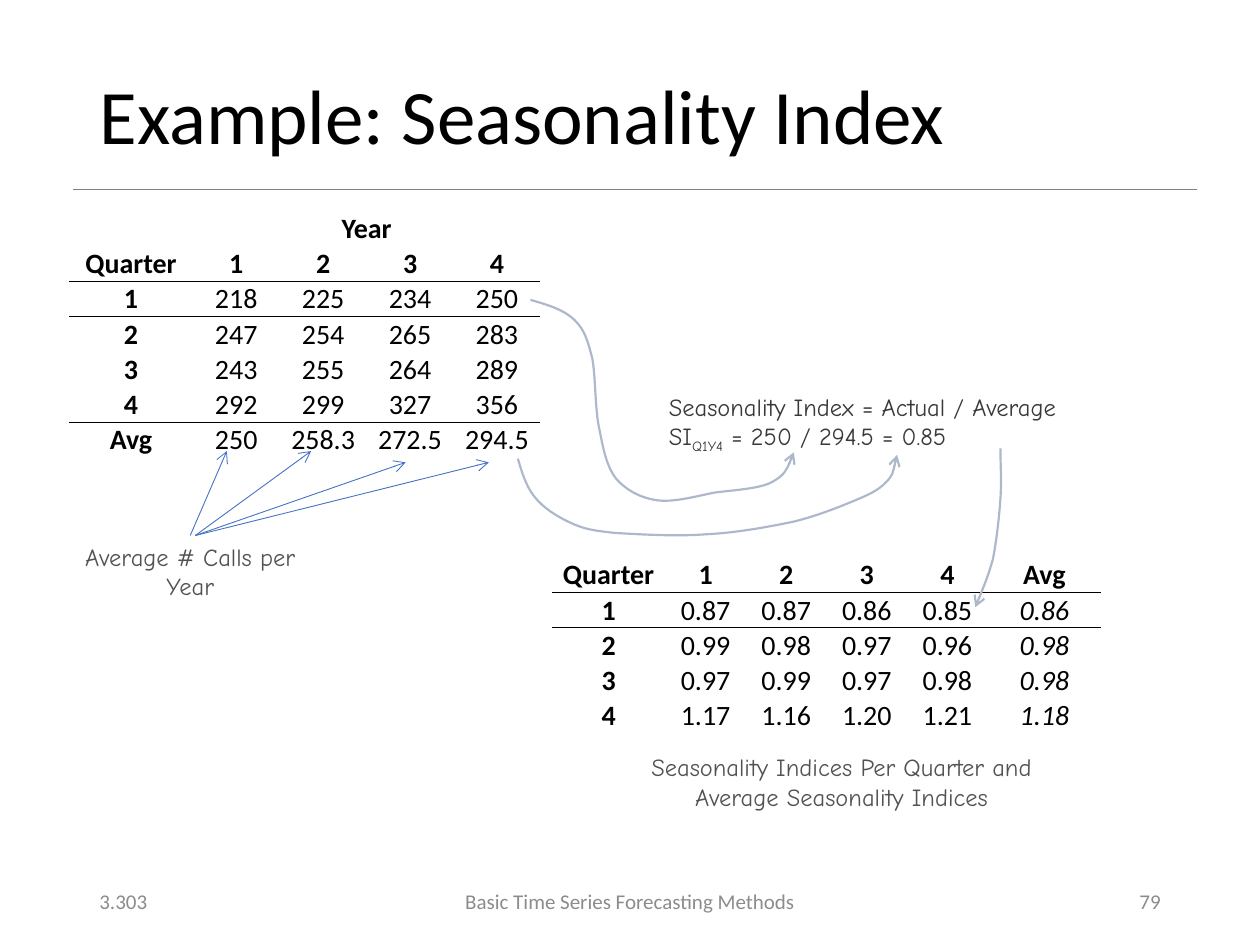
from dataclasses import dataclass

from lxml import etree
from pptx import Presentation
from pptx import util as u
from pptx.dml.color import RGBColor
from pptx.enum import shapes, text
from pptx.oxml import ns


@dataclass(frozen=True)
class Theme:
    black: str = "000000"
    grey: str = "808080"
    footer: str = "8C8C8C"
    note: str = "525252"
    formula: str = "3B3838"
    blue: str = "4472C4"
    pale: str = "ADB9CA"
    body_font: str = "Calibri"
    note_font: str = "Comic Neue"
    title_size: int = 44
    table_size: int = 16
    note_size: int = 14
    footer_size: int = 12


theme = Theme()
px = 9144
left, center, right = text.PP_ALIGN.LEFT, text.PP_ALIGN.CENTER, text.PP_ALIGN.RIGHT


def write(paragraph, words, size, font=theme.body_font, color=theme.black,
          align=left, bold=False, italic=False, baseline=0):
    paragraph.alignment = align
    if not words:
        paragraph._p.get_or_add_endParaRPr().set("sz", str(size * 100))
        return
    run = paragraph.add_run()
    run.text = words
    run.font.size = u.Pt(size)
    run.font.name = font
    run.font.bold = bold
    run.font.italic = italic
    run.font.color.rgb = RGBColor.from_string(color)
    if baseline:
        run.font._element.set("baseline", str(baseline * 1000))


def draw_line(shape, color, width, arrow=True):
    shape.line.color.rgb = RGBColor.from_string(color)
    shape.line.width = u.Pt(width)
    properties = shape.element.spPr
    if arrow:
        etree.SubElement(properties.find(ns.qn("a:ln")), ns.qn("a:tailEnd"), type="arrow")
    etree.SubElement(properties, ns.qn("a:effectLst"))


presentation = Presentation()
presentation.slide_width = 1000 * px
presentation.slide_height = 750 * px
slide = presentation.slides.add_slide(presentation.slide_layouts[5])

rule = slide.shapes.add_connector(
    shapes.MSO_CONNECTOR.STRAIGHT, 58 * px, 150 * px, 950 * px, 150 * px)
draw_line(rule, theme.grey, 0.5, arrow=False)

title = slide.shapes.title
title.left, title.top, title.width, title.height = 69 * px, 40 * px, 862 * px, 110 * px
title.text_frame.auto_size = text.MSO_AUTO_SIZE.NONE
title.text_frame.vertical_anchor = text.MSO_ANCHOR.MIDDLE
title.text_frame.paragraphs[0].line_spacing = 0.9
write(title.text_frame.paragraphs[0], "Example: Seasonality Index", theme.title_size)

footers = [
    (69, 225, "3.303", left),
    (331, 338, "Basic Time Series Forecasting Methods", center),
    (706, 225, "79", right),
]
for x, width, words, align in footers:
    box = slide.shapes.add_textbox(x * px, 695 * px, width * px, 40 * px)
    box.text_frame.word_wrap = True
    box.text_frame.vertical_anchor = text.MSO_ANCHOR.MIDDLE
    write(box.text_frame.paragraphs[0], words, theme.footer_size,
          color=theme.footer, align=align)

calls = [
    ["", "Year", "", "", ""],
    ["Quarter", "1", "2", "3", "4"],
    ["1", "218", "225", "234", "250"],
    ["2", "247", "254", "265", "283"],
    ["3", "243", "255", "264", "289"],
    ["4", "292", "299", "327", "356"],
    ["Avg", "250", "258.3", "272.5", "294.5"],
]
indices = [
    ["Quarter", "1", "2", "3", "4", "Avg"],
    ["1", "0.87", "0.87", "0.86", "0.85", "0.86"],
    ["2", "0.99", "0.98", "0.97", "0.96", "0.98"],
    ["3", "0.97", "0.99", "0.97", "0.98", "0.98"],
    ["4", "1.17", "1.16", "1.20", "1.21", "1.18"],
]
row_height = 28
tables = [
    (calls, 55, 167, [98] + [69] * 4, 1, [1, 5]),
    (indices, 438, 442, [90] + [64] * 4 + [90], 0, [0]),
]
for rows, x, y, widths, header, ruled in tables:
    frame = slide.shapes.add_table(len(rows), len(widths), x * px, y * px,
                                   sum(widths) * px, len(rows) * row_height * px)
    table = frame.table
    table.first_row = table.horz_banding = False
    style = table._tbl.tblPr.find(ns.qn("a:tableStyleId"))
    style.text = "{2D5ABB26-0587-4C30-8999-92F81FD0307C}"
    for column, width in zip(table.columns, widths):
        column.width = width * px
    if header:
        table.cell(0, 1).merge(table.cell(0, 4))
    for r, row in enumerate(rows):
        for c, words in enumerate(row):
            cell = table.cell(r, c)
            cell.fill.background()
            cell.vertical_anchor = text.MSO_ANCHOR.BOTTOM
            cell.margin_left = cell.margin_right = cell.margin_top = px
            cell.margin_bottom = 0
            write(cell.text_frame.paragraphs[0], words, theme.table_size, align=center,
                  bold=r <= header or c == 0, italic=r > header and c == 5)
            for edge, edge_row in (("a:lnB", r), ("a:lnT", r - 1)):
                if edge_row in ruled:
                    border = etree.Element(ns.qn(edge), w=str(u.Pt(0.5)))
                    fill = etree.SubElement(border, ns.qn("a:solidFill"))
                    etree.SubElement(fill, ns.qn("a:srgbClr"), val=theme.black)
                    cell._tc.get_or_add_tcPr().insert(0, border)

notes = [
    (47, 425, 208, 57, center, theme.note, [[("Average # Calls per Year", 0)]]),
    (497, 592, 342, 81, center, theme.note,
     [[("Seasonality Indices Per Quarter and Average Seasonality Indices", 0)]]),
    (521, 306, 442, 57, left, theme.formula,
     [[("Seasonality Index = Actual / Average", 0)],
      [("SI", 0), ("Q1Y4", -25), (" = 250 / 294.5 = 0.85", 0)]]),
]
for x, y, width, height, align, color, lines in notes:
    box = slide.shapes.add_textbox(x * px, y * px, width * px, height * px)
    box.text_frame.word_wrap = True
    box.text_frame.auto_size = text.MSO_AUTO_SIZE.SHAPE_TO_FIT_TEXT
    for index, line in enumerate(lines):
        paragraph = box.text_frame.add_paragraph() if index else box.text_frame.paragraphs[0]
        for words, baseline in line:
            write(paragraph, words, theme.note_size, font=theme.note_font,
                  color=color, align=align, baseline=baseline)

for start, end_x, end_y in [(151, 180, 358), (155, 247, 358), (155, 322, 367), (155, 388, 367)]:
    arrow = slide.shapes.add_connector(
        shapes.MSO_CONNECTOR.STRAIGHT, start * px, 425 * px, end_x * px, end_y * px)
    draw_line(arrow, theme.blue, 0.5)

curves = [
    [(794, 356), (794, 369), (795, 381), (794, 396), (793, 410), (791, 429), (788, 444),
     (784, 458), (779, 470), (774, 482)],
    [(421, 238), (435, 242), (448, 246), (456, 254), (464, 262), (466, 269), (470, 284),
     (473, 299), (472, 326), (476, 342), (479, 358), (482, 371), (489, 380),
     (497, 389), (508, 395), (521, 397), (534, 399), (552, 394), (567, 391),
     (582, 389), (602, 388), (612, 383), (623, 377), (627, 368), (630, 359)],
    [(411, 364), (414, 374), (417, 385), (424, 394), (431, 403), (442, 410), (453, 415),
     (464, 420), (470, 421), (488, 423), (506, 424), (537, 426), (561, 424),
     (584, 423), (611, 418), (630, 414), (650, 409), (667, 402), (679, 397),
     (691, 392), (697, 389), (703, 383), (709, 377), (710, 369), (712, 361)],
]
for points in curves:
    builder = slide.shapes.build_freeform(*points[0], scale=px)
    builder.add_line_segments(points[1:], close=False)
    curve = builder.convert_to_shape()
    outline = next(curve.element.iter(ns.qn("a:path")))
    segments = outline.findall(ns.qn("a:lnTo"))
    for first in range(0, len(segments), 3):
        bezier = etree.SubElement(outline, ns.qn("a:cubicBezTo"))
        for segment in segments[first:first + 3]:
            bezier.append(segment[0])
            outline.remove(segment)
    curve.fill.background()
    draw_line(curve, theme.pale, 1.25)

presentation.save("out.pptx")
